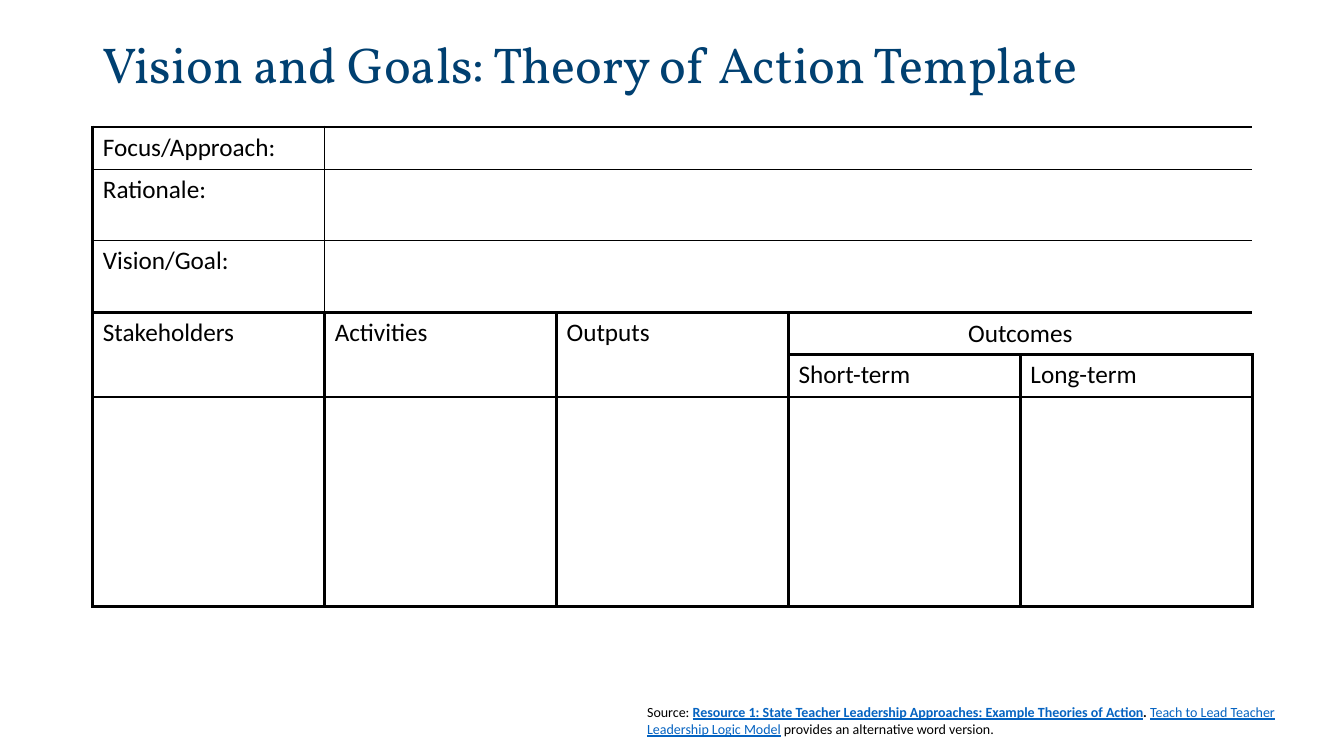
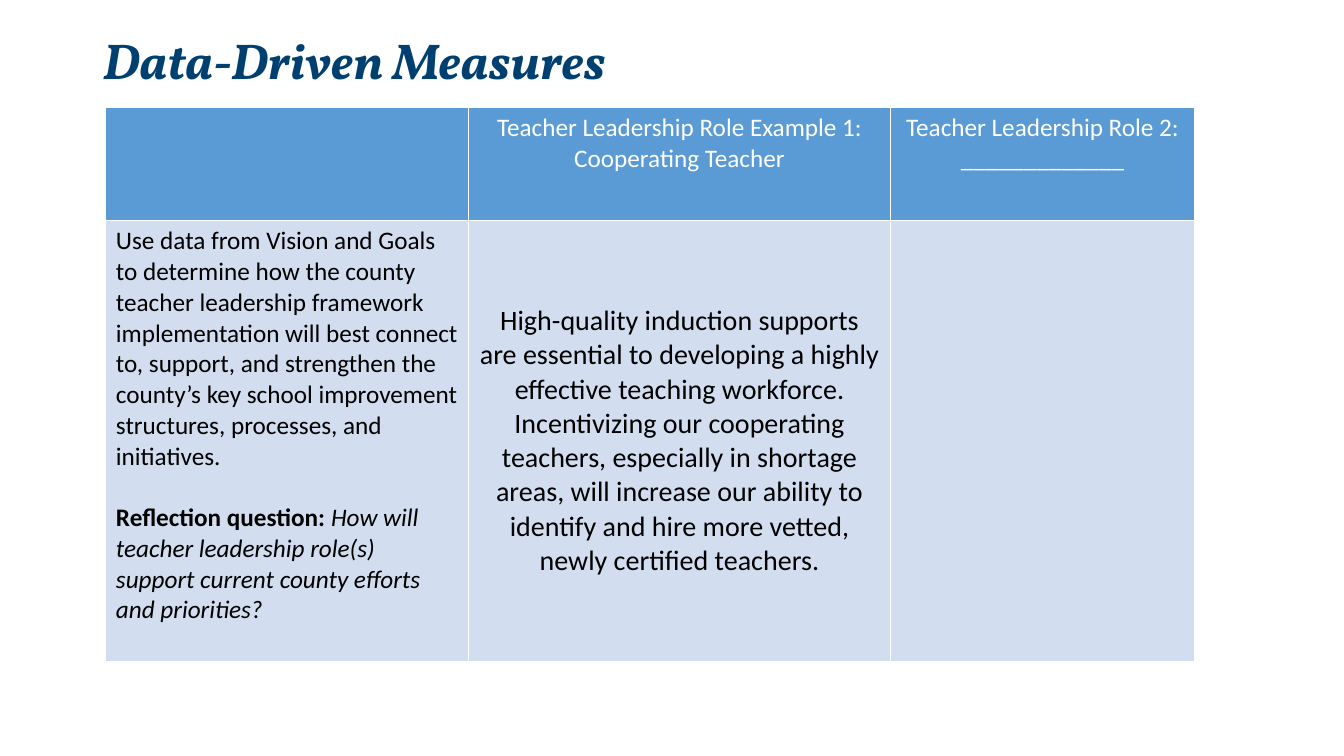
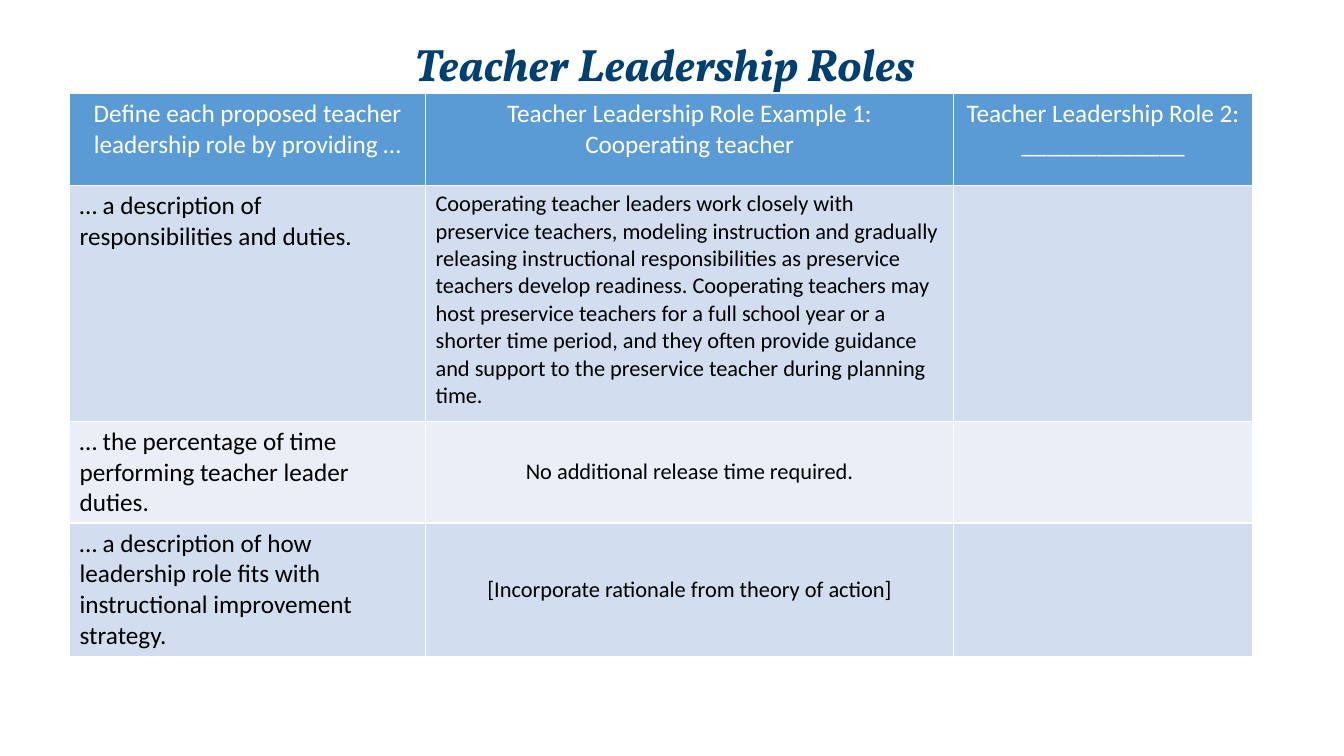
from lxml import etree
from pptx import Presentation
from pptx.dml.color import RGBColor
from pptx.enum.text import MSO_ANCHOR, PP_ALIGN
from pptx.oxml.ns import qn
from pptx.util import Inches, Pt

LEFT, CENTER = PP_ALIGN.LEFT, PP_ALIGN.CENTER
TOP, MIDDLE = MSO_ANCHOR.TOP, MSO_ANCHOR.MIDDLE

NAVY, BLACK, WHITE, LINK = "004071", "000000", "FFFFFF", "0563C1"
HEADER, BAND_DARK, BAND_LIGHT = "5B9BD5", "D2DEEF", "EAEFF7"
TITLE_FONT, BODY_FONT = "Vollkorn", "Calibri"
PLAIN_TABLE_STYLE = "{2D5ABB26-0587-4C30-8999-92F81FD0307C}"
THICK, THIN = 2.25, 1
SIDES = ("L", "R", "T", "B")


def color(hex_text):
    return RGBColor.from_string(hex_text)


def set_font(font, size, hex_text, name=BODY_FONT):
    font.name, font.size = name, Pt(size)
    font.color.rgb = color(hex_text)


def add_text_box(page, box, anchor=TOP):
    frame = page.shapes.add_textbox(*map(Inches, box)).text_frame
    frame.word_wrap = True
    frame.vertical_anchor = anchor
    return frame


def add_title(page, box, text, size=36, emphasis=False, align=LEFT):
    para = add_text_box(page, box, MIDDLE).paragraphs[0]
    para.text, para.alignment, para.line_spacing = text, align, 0.9
    set_font(para.font, size, NAVY, TITLE_FONT)
    para.font.bold = para.font.italic = emphasis


def add_plain_table(page, left, top, widths, heights):
    box = map(Inches, (left, top, sum(widths), sum(heights)))
    table = page.shapes.add_table(len(heights), len(widths), *box).table
    table.first_row = table.horz_banding = False
    table._tbl.tblPr.find(qn("a:tableStyleId")).text = PLAIN_TABLE_STYLE
    for column, width in zip(table.columns, widths):
        column.width = Inches(width)
    for row, height in zip(table.rows, heights):
        row.height = Inches(height)
    return table


def set_borders(cell, weights, hex_text):
    """Draw the sides given in weights (side letter to points), before any fill."""
    properties = cell._tc.get_or_add_tcPr()
    for side in SIDES:
        if side in weights:
            line = etree.SubElement(properties, qn("a:ln" + side), w=str(Pt(weights[side])))
            fill = etree.SubElement(line, qn("a:solidFill"))
            etree.SubElement(fill, qn("a:srgbClr"), val=hex_text)


def write_cell(cell, text, size=18, hex_text=BLACK, align=LEFT, anchor=TOP):
    cell.text = text
    cell.vertical_anchor = anchor
    for para in cell.text_frame.paragraphs:
        para.alignment = align
        set_font(para.font, size, hex_text)


def frame_region(table, first_row, first_col, last_row, last_col):
    """Outline a block of cells; only the lines among the top three rows are thin."""
    for row in range(first_row, last_row + 1):
        for col in range(first_col, last_col + 1):
            weights = {}
            if col == first_col:
                weights["L"] = THIN if row < 3 and col == 1 else THICK
            if col == last_col:
                weights["R"] = THIN if row < 3 and col == 0 else THICK
            if row == first_row:
                weights["T"] = THIN if row in (1, 2) else THICK
            if row == last_row:
                weights["B"] = THIN if row in (0, 1) else THICK
            set_borders(table.cell(row, col), weights, BLACK)


def add_theory_table(page, left, top):
    table = add_plain_table(page, left, top, [2.3] * 5, [0.42, 0.71, 0.71, 0.42, 0.42, 2.08])
    for row, label in enumerate(("Focus/Approach:", "Rationale:", "Vision/Goal:")):
        frame_region(table, row, 0, row, 0)
        frame_region(table, row, 1, row, 4)
        table.cell(row, 1).merge(table.cell(row, 4))
        write_cell(table.cell(row, 0), label)
    for col, label in enumerate(("Stakeholders", "Activities", "Outputs")):
        frame_region(table, 3, col, 4, col)
        table.cell(3, col).merge(table.cell(4, col))
        write_cell(table.cell(3, col), label)
    frame_region(table, 3, 3, 4, 4)
    table.cell(3, 3).merge(table.cell(3, 4))
    write_cell(table.cell(3, 3), "Outcomes", align=CENTER, anchor=MIDDLE)
    write_cell(table.cell(4, 3), "Short-term")
    write_cell(table.cell(4, 4), "Long-term")
    for col in range(5):
        frame_region(table, 5, col, 5, col)


def add_source_note(page, box):
    para = add_text_box(page, box).paragraphs[0]
    set_font(para.font, 10, BLACK)
    for text, bold, linked in (
        ("Source: ", False, False),
        ("Resource 1: State Teacher Leadership Approaches: Example Theories of Action", True, True),
        (". ", True, False),
        ("Teach to Lead Teacher Leadership Logic Model", False, True),
        (" provides an alternative word version.", False, False),
    ):
        span = para.add_run()
        span.text = text
        span.font.bold, span.font.underline = bold, linked
        span.font.color.rgb = color(LINK if linked else BLACK)


def add_banded_table(page, left, top, widths, heights, headings):
    """Add a blue header row over alternating pale rows with white rules."""
    table = add_plain_table(page, left, top, widths, heights)
    for row in range(len(heights)):
        for col in range(len(widths)):
            cell = table.cell(row, col)
            set_borders(cell, dict.fromkeys(SIDES, THIN), WHITE)
            cell.fill.solid()
            band = BAND_DARK if row % 2 else BAND_LIGHT
            cell.fill.fore_color.rgb = color(band if row else HEADER)
    for col, heading in enumerate(headings):
        if heading:
            write_cell(table.cell(0, col), heading, hex_text=WHITE, align=CENTER)
    return table


def add_reflection(cell):
    para = cell.text_frame.add_paragraph()
    para.space_before = Pt(22)
    set_font(para.font, 18, BLACK)
    question = para.add_run()
    question.text = "Reflection question: "
    question.font.bold = True
    answer = para.add_run()
    answer.text = ("How will teacher leadership role(s) support current county "
                   "efforts and priorities?")
    answer.font.italic = True


def build_vision_slide(page):
    add_title(page, (0.92, 0.2, 11.5, 0.93), "Vision and Goals: Theory of Action Template")
    add_theory_table(page, 0.92, 1.26)
    add_source_note(page, (6.32, 6.93, 7.01, 0.5))


def build_measures_slide(page):
    add_title(page, (0.92, 0, 11.5, 1.26), "Data-Driven Measures", emphasis=True)
    table = add_banded_table(
        page, 1.05, 1.07, [3.6, 4.18, 3.02], [1.12, 4.37],
        ("", "Teacher Leadership Role Example 1:\nCooperating Teacher",
         "Teacher Leadership Role 2: _____________"))
    use_of_data, example = table.cell(1, 0), table.cell(1, 1)
    write_cell(use_of_data, (
        "Use data from Vision and Goals to determine how the county teacher leadership "
        "framework implementation will best connect to, support, and strengthen the county’s "
        "key school improvement structures, processes, and initiatives."))
    add_reflection(use_of_data)
    write_cell(example, (
        "High-quality induction supports are essential to developing a highly effective "
        "teaching workforce. Incentivizing our cooperating teachers, especially in shortage "
        "areas, will increase our ability to identify and hire more vetted, newly certified "
        "teachers."), 20, align=CENTER, anchor=MIDDLE)


def build_roles_slide(page):
    add_title(page, (0.84, 0.4, 11.5, 0.53), "Teacher Leadership Roles", 32.4, True, CENTER)
    table = add_banded_table(
        page, 0.69, 0.93, [3.53, 5.24, 2.96], [0.91, 2.34, 1.01, 1.32],
        ("Define each proposed teacher leadership role by providing …",
         "Teacher Leadership Role Example 1:\nCooperating teacher",
         "Teacher Leadership Role 2: _____________"))
    duties = (
        "Cooperating teacher leaders work closely with preservice teachers, modeling "
        "instruction and gradually releasing instructional responsibilities as preservice "
        "teachers develop readiness. Cooperating teachers may host preservice teachers for a "
        "full school year or a shorter time period, and they often provide guidance and "
        "support to the preservice teacher during planning time.")
    rows = (
        ("… a description of responsibilities and duties.", duties, LEFT, TOP),
        ("… the percentage of time performing teacher leader duties.",
         "No additional release time required.", CENTER, MIDDLE),
        ("… a description of how leadership role fits with instructional improvement strategy.",
         "[Incorporate rationale from theory of action]", CENTER, MIDDLE),
    )
    for row, (prompt, example, align, anchor) in enumerate(rows, 1):
        write_cell(table.cell(row, 0), prompt)
        write_cell(table.cell(row, 1), example, 16, align=align, anchor=anchor)


def main():
    deck = Presentation()
    deck.slide_width, deck.slide_height = Inches(13.33), Inches(7.5)
    for build in (build_vision_slide, build_measures_slide, build_roles_slide):
        build(deck.slides.add_slide(deck.slide_layouts[6]))
    deck.save("out.pptx")


if __name__ == "__main__":
    main()
